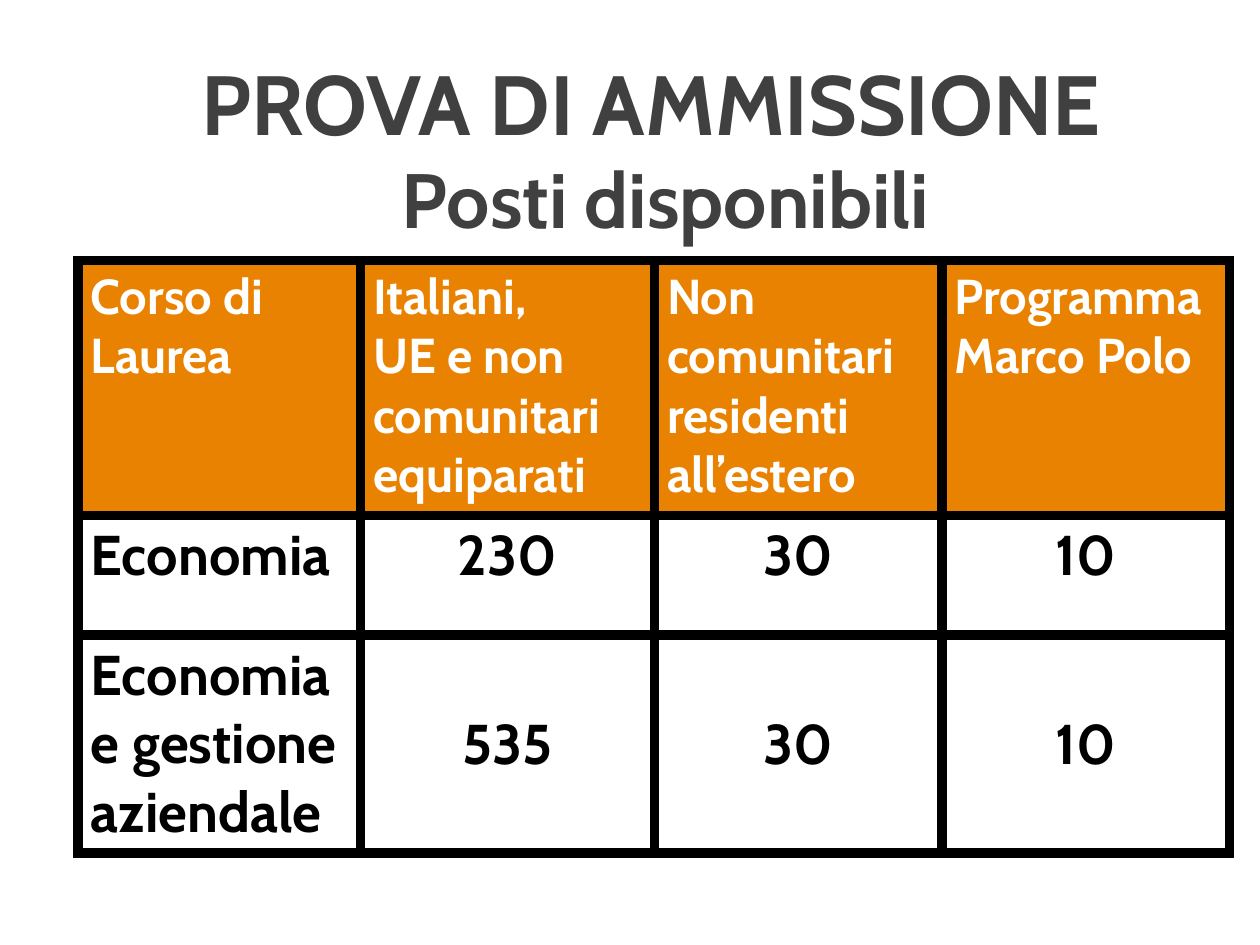
from dataclasses import dataclass

from lxml import etree
from pptx import Presentation
from pptx import util as u
from pptx.dml.color import RGBColor
from pptx.enum import text
from pptx.oxml.ns import qn

SLIDE_W, SLIDE_H = u.Inches(10), u.Inches(7.5)


@dataclass(frozen=True)
class Theme:
    font: str = "Cabin"
    heading: str = "404040"
    header_text: str = "FFFFFF"
    header_fill: str = "E98200"
    body_text: str = "000000"
    body_fill: str = "FFFFFF"
    border: str = "000000"
    title_size: int = 48
    subtitle_size: int = 44
    header_size: int = 28
    body_size: int = 32
    title_leading: int = 52
    border_width: int = 6


THEME = Theme()

HEADER = ["Corso di Laurea", "Italiani,\nUE e non comunitari equiparati",
          "Non comunitari residenti all’estero", "Programma Marco Polo"]
COURSES = [["Economia", "230", "30", "10"],
           ["Economia e gestione aziendale", "535", "30", "10"]]
COL_WIDTHS = [2.24, 2.33, 2.28, 2.28]
ROW_HEIGHTS = [2.02, 0.95, 1.73]


def share(left, top, width, height):
    """Turn percentages of the slide's size into a box."""
    return (int(SLIDE_W * left / 100), int(SLIDE_H * top / 100),
            int(SLIDE_W * width / 100), int(SLIDE_H * height / 100))


def add_text(tf, content, size, color, align):
    """Write one paragraph for each line of content."""
    for i, line in enumerate(content.split("\n")):
        p = tf.paragraphs[0] if i == 0 else tf.add_paragraph()
        p.alignment = align
        r = p.add_run()
        r.text = line
        r.font.name, r.font.size, r.font.bold = THEME.font, u.Pt(size), True
        r.font.color.rgb = RGBColor.from_string(color)


def add_heading(s, box, content, size, anchor, leading=None):
    tf = s.shapes.add_textbox(*box).text_frame
    tf.word_wrap = True
    tf.vertical_anchor = anchor
    add_text(tf, content, size, THEME.heading, text.PP_ALIGN.CENTER)
    if leading:
        tf.paragraphs[0].line_spacing = u.Pt(leading)


def set_borders(cell):
    tcPr = cell._tc.get_or_add_tcPr()
    for i, side in enumerate(("a:lnL", "a:lnR", "a:lnT", "a:lnB")):
        ln = etree.Element(qn(side), w=str(u.Pt(THEME.border_width)))
        fill = etree.SubElement(ln, qn("a:solidFill"))
        etree.SubElement(fill, qn("a:srgbClr"), val=THEME.border)
        tcPr.insert(i, ln)


def fill_cell(cell, content, is_header, align, anchor):
    size = THEME.header_size if is_header else THEME.body_size
    color = THEME.header_text if is_header else THEME.body_text
    fill = THEME.header_fill if is_header else THEME.body_fill
    cell.fill.solid()
    cell.fill.fore_color.rgb = RGBColor.from_string(fill)
    cell.vertical_anchor = anchor
    add_text(cell.text_frame, content, size, color, align)
    set_borders(cell)


def add_places_table(s, box):
    rows = [HEADER] + COURSES
    table = s.shapes.add_table(len(rows), len(HEADER), *box).table
    for col, width in zip(table.columns, COL_WIDTHS):
        col.width = int(box[2] * width / sum(COL_WIDTHS))
    for row, height in zip(table.rows, ROW_HEIGHTS):
        row.height = int(box[3] * height / sum(ROW_HEIGHTS))
    last = len(rows) - 1
    for i, values in enumerate(rows):
        for j, value in enumerate(values):
            is_number = i > 0 and j > 0
            align = text.PP_ALIGN.CENTER if is_number else text.PP_ALIGN.LEFT
            anchor = (text.MSO_ANCHOR.MIDDLE if is_number and i == last
                      else text.MSO_ANCHOR.TOP)
            fill_cell(table.cell(i, j), value, i == 0, align, anchor)


def main():
    prs = Presentation()
    prs.slide_width, prs.slide_height = SLIDE_W, SLIDE_H
    s = prs.slides.add_slide(prs.slide_layouts[6])
    add_heading(s, share(11.9, 1.6, 79.5, 19.47), "PROVA DI AMMISSIONE",
                THEME.title_size, text.MSO_ANCHOR.MIDDLE, THEME.title_leading)
    add_heading(s, share(13.1, 15.33, 79.5, 63.07), "Posti disponibili",
                THEME.subtitle_size, text.MSO_ANCHOR.TOP)
    add_places_table(s, share(6.2, 27.6, 91.4, 62.67))
    prs.save("out.pptx")


if __name__ == "__main__":
    main()
